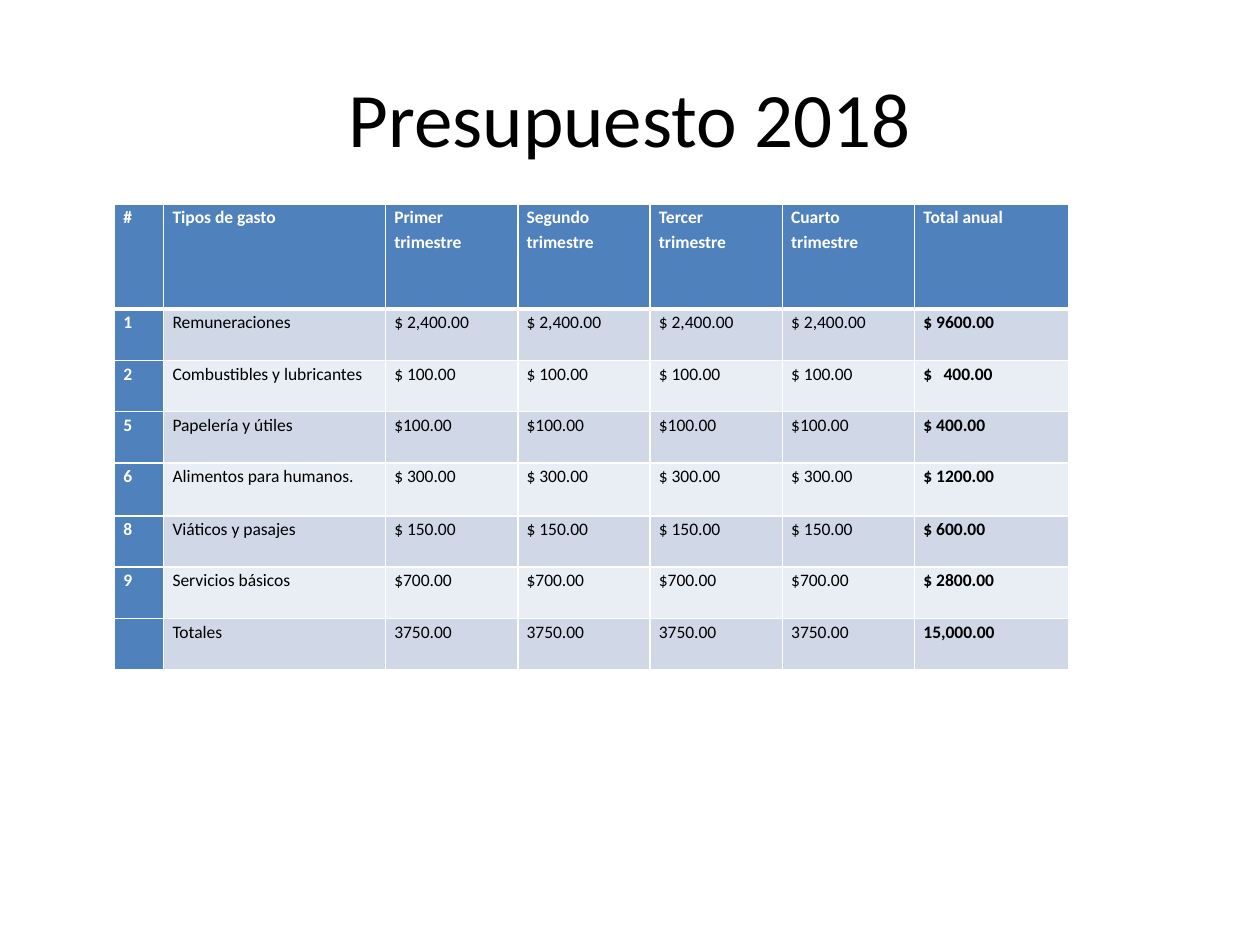
import pptx
import pptx.dml.color
import pptx.enum.text
import pptx.oxml
import pptx.oxml.ns
import pptx.util

WHITE = pptx.dml.color.RGBColor(0xFF, 0xFF, 0xFF)
BLACK = pptx.dml.color.RGBColor(0x00, 0x00, 0x00)
BLUE = pptx.dml.color.RGBColor(0x4F, 0x81, 0xBD)
BANDS = (
    pptx.dml.color.RGBColor(0xE9, 0xED, 0xF4),
    pptx.dml.color.RGBColor(0xD0, 0xD8, 0xE8),
)
FONT = "Calibri"
ALIGN = pptx.enum.text.PP_ALIGN

# Shares are percentages of the slide's width or height
COLUMN_SHARES = [3.9, 17.6] + [10.5] * 4 + [12.2]
ROW_SHARES = [11.1] + [5.43] * 3 + [5.6] + [5.43] * 3

HEADER = ["#", "Tipos de gasto", "Primer trimestre", "Segundo trimestre",
          "Tercer trimestre", "Cuarto trimestre", "Total anual"]
EXPENSES = [
    ("1", "Remuneraciones", "$ 2,400.00", "$ 9600.00"),
    ("2", "Combustibles y lubricantes", "$ 100.00", "$\t400.00"),
    ("5", "Papelería y útiles", "$100.00", "$ 400.00"),
    ("6", "Alimentos para humanos.", "$ 300.00", "$ 1200.00"),
    ("8", "Viáticos y pasajes", "$ 150.00", "$ 600.00"),
    ("9", "Servicios básicos", "$700.00", "$ 2800.00"),
    ("", "Totales", "3750.00", "15,000.00"),
]
rows = [HEADER] + [[number, kind] + [quarter] * 4 + [total]
                   for number, kind, quarter, total in EXPENSES]

presentation = pptx.Presentation()
presentation.slide_width = pptx.util.Inches(10)
presentation.slide_height = pptx.util.Inches(7.5)
percent_x = presentation.slide_width / 100
percent_y = presentation.slide_height / 100
slide = presentation.slides.add_slide(presentation.slide_layouts[6])


def style_paragraph(paragraph, size, color, bold, alignment):
    paragraph.alignment = alignment
    for run in paragraph.runs:
        run.font.name = FONT
        run.font.size = pptx.util.Pt(size)
        run.font.bold = bold
        run.font.color.rgb = color


def add_borders(cell, top, bottom):
    """Draw white cell edges; top and bottom are widths in points."""
    properties = cell._tc.get_or_add_tcPr()
    edges = (("L", 1), ("R", 1), ("T", top), ("B", bottom))
    for position, (side, width) in enumerate(edges):
        properties.insert(position, pptx.oxml.parse_xml(
            f'<a:ln{side} {pptx.oxml.ns.nsdecls("a")} w="{pptx.util.Pt(width)}">'
            f'<a:solidFill><a:srgbClr val="{WHITE}"/></a:solidFill></a:ln{side}>'))


title = slide.shapes.add_textbox(
    int(5 * percent_x), int(4 * percent_y),
    int(90 * percent_x), int(16.67 * percent_y))
title.text_frame.word_wrap = True
title.text_frame.vertical_anchor = pptx.enum.text.MSO_ANCHOR.MIDDLE
title.text_frame.text = "Presupuesto 2018"
style_paragraph(title.text_frame.paragraphs[0], 44, BLACK, False, ALIGN.CENTER)

budget = slide.shapes.add_table(
    len(rows), len(HEADER), int(9.1 * percent_x), int(21.6 * percent_y),
    int(sum(COLUMN_SHARES) * percent_x), int(sum(ROW_SHARES) * percent_y)).table
for column, share in zip(budget.columns, COLUMN_SHARES):
    column.width = int(share * percent_x)
for row, share in zip(budget.rows, ROW_SHARES):
    row.height = int(share * percent_y)

last_column = len(HEADER) - 1
for row_index, texts in enumerate(rows):
    for column_index, text in enumerate(texts):
        cell = budget.cell(row_index, column_index)
        cell.margin_left = cell.margin_right = pptx.util.Inches(0.07)
        cell.margin_top = cell.margin_bottom = 0

        is_heading = row_index == 0 or column_index == 0
        is_quarter = row_index > 0 and 2 <= column_index < last_column
        cell.fill.solid()
        cell.fill.fore_color.rgb = BLUE if is_heading else BANDS[row_index % 2]
        add_borders(cell, top=3 if row_index == 1 else 1,
                    bottom=3 if row_index == 0 else 1)

        cell.text_frame.text = text
        paragraph = cell.text_frame.paragraphs[0]
        paragraph.line_spacing = 1.15
        style_paragraph(paragraph, 10, WHITE if is_heading else BLACK,
                        is_heading or column_index == last_column,
                        ALIGN.LEFT if is_quarter else ALIGN.JUSTIFY)
        if "\t" in text:
            paragraph._p.get_or_add_pPr().append(pptx.oxml.parse_xml(
                f'<a:tabLst {pptx.oxml.ns.nsdecls("a")}>'
                f'<a:tab pos="{pptx.util.Inches(0.16)}" algn="l"/></a:tabLst>'))

presentation.save("out.pptx")
